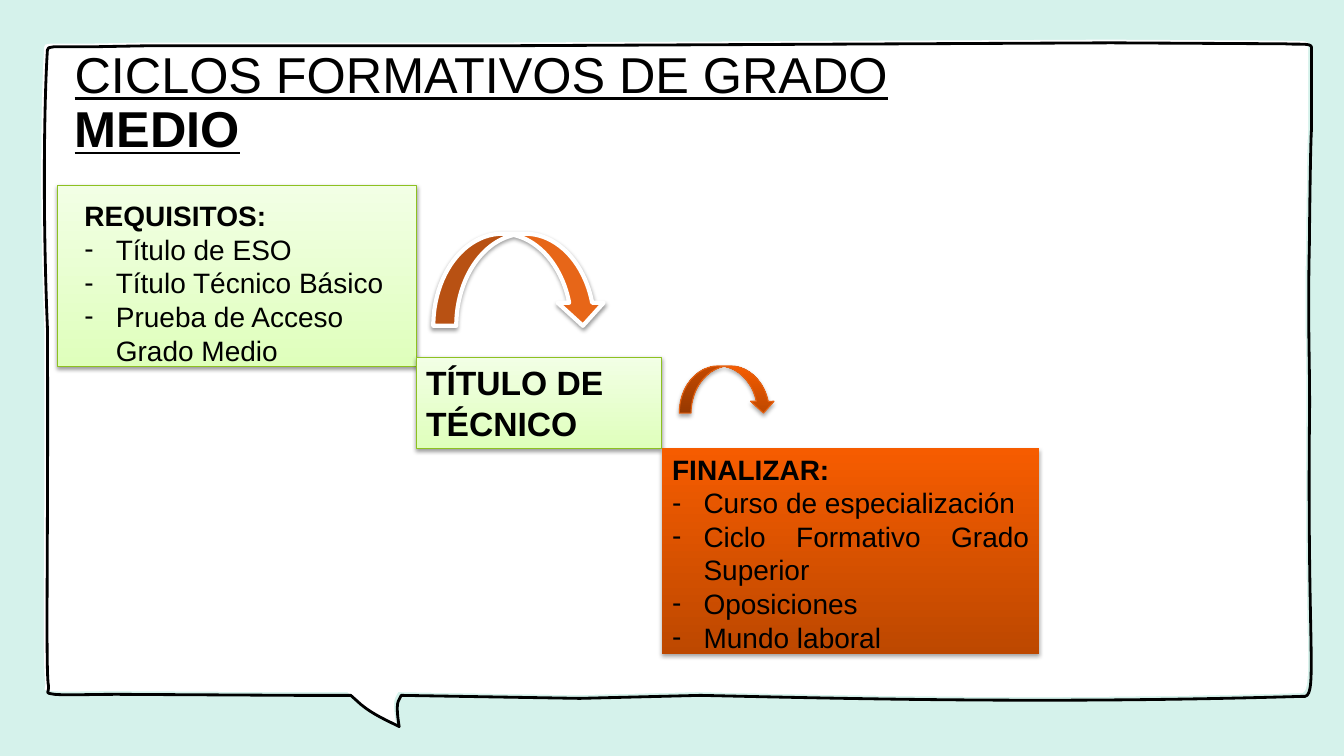
from dataclasses import dataclass

import pptx
import pptx.dml.color
import pptx.enum.shapes
import pptx.enum.text
import pptx.oxml
import pptx.oxml.ns
import pptx.util
from lxml import etree

Cm = pptx.util.Cm
Pt = pptx.util.Pt
qn = pptx.oxml.ns.qn
SHAPES = pptx.enum.shapes.MSO_SHAPE
ANCHOR = pptx.enum.text.MSO_ANCHOR
ALIGN = pptx.enum.text.PP_ALIGN


@dataclass(frozen=True)
class Theme:
    font: str = "Arial"
    text: str = "000000"
    background: str = "D5F2EB"
    paper: str = "FFFFFF"
    green: tuple = ("DFFFBC", "F2FFE5")
    green_line: str = "8DC121"
    orange: tuple = ("BD4800", "F65C00")
    arrow: str = "E76618"
    arrow_line: str = "E66212"
    title_size: int = 36
    heading_size: int = 24
    body_size: int = 20


@dataclass(frozen=True)
class Box:
    """A rectangle in centimetres."""
    left: float
    top: float
    width: float
    height: float

    def lengths(self):
        return [Cm(v) for v in (self.left, self.top, self.width, self.height)]

    def inner(self, dx, dy, width, height):
        return Box(self.left + dx, self.top + dy, width, height)


THEME = Theme()

# Speech bubble outline on a 1257 x 679 grid; six numbers make a cubic curve.
BUBBLE_GRID = (1257, 679)
BUBBLE_START = (1058, 0)
BUBBLE_SEGMENTS = [
    (1231, 1), (1244, 2, 1256, 0, 1257, 4), (1257, 36), (1257, 53, 1257, 70, 1257, 87),
    (1256, 100, 1255, 193, 1255, 199), (1253, 287, 1256, 323, 1255, 382),
    (1253, 614, 1264, 652, 1248, 649), (1011, 656, 827, 652, 651, 648),
    (531, 651), (354, 648), (352, 652), (349, 656, 350, 667, 352, 679),
    (340, 673, 326, 667, 314, 657), (304, 648), (251, 648), (73, 647),
    (45, 647, 22, 648, 10, 647), (-1, 645, 5, 647, 4, 638),
    (1, 623, 4, 479, 3, 283), (-2, 164, 0, 53, 3, 7), (4, 6, 4, 5, 4, 5),
    (9, 4), (33, 4), (45, 4), (99, 3), (436, 3),
]


def color(value):
    return pptx.dml.color.RGBColor.from_string(value)


def paint(shape, fill=None, line=None, line_width=0.75):
    """Set a solid or two-colour upward gradient fill, and the line."""
    shape.shadow.inherit = False
    if fill is None:
        shape.fill.background()
    elif isinstance(fill, tuple):
        shape.fill.gradient()
        shape.fill.gradient_angle = 90
        for stop, value in zip(shape.fill.gradient_stops, fill):
            stop.color.rgb = color(value)
    else:
        shape.fill.solid()
        shape.fill.fore_color.rgb = color(fill)
    if line is None:
        shape.line.fill.background()
    else:
        shape.line.color.rgb = color(line)
        shape.line.width = Pt(line_width)


def add_soft_shadow(shape, opacity, distance):
    effects = shape._element.spPr.find(qn("a:effectLst"))
    shadow = etree.SubElement(effects, qn("a:outerShdw"), blurRad=str(Pt(3.1)),
                              dist=str(Pt(distance)), dir="5400000", rotWithShape="0")
    black = etree.SubElement(shadow, qn("a:srgbClr"), val=THEME.text)
    etree.SubElement(black, qn("a:alpha"), val=str(opacity * 1000))


def add_bullet(paragraph):
    properties = paragraph._p.get_or_add_pPr()
    indent = Cm(0.79)
    properties.set("marL", str(indent))
    properties.set("indent", str(-indent))
    bullet_color = etree.SubElement(properties, qn("a:buClr"))
    etree.SubElement(bullet_color, qn("a:srgbClr"), val=THEME.text)
    etree.SubElement(properties, qn("a:buFont"), typeface=THEME.font)
    etree.SubElement(properties, qn("a:buChar"), char="-")


def add_run(paragraph, text, size, bold=False, underline=None):
    run = paragraph.add_run()
    run.text = text
    run.font.name = THEME.font
    run.font.size = Pt(size)
    run.font.bold = bold
    run.font.underline = underline
    run.font.color.rgb = color(THEME.text)


def write_list(frame, heading, items=(), size=THEME.body_size, align=ALIGN.LEFT):
    """Write a bold heading followed by dashed items."""
    frame.word_wrap = True
    paragraph = frame.paragraphs[0]
    paragraph.alignment = align
    add_run(paragraph, heading, size, bold=True)
    for item in items:
        paragraph = frame.add_paragraph()
        paragraph.alignment = align
        add_bullet(paragraph)
        add_run(paragraph, item, size)


def bend_segments(shape, segments, origin):
    """Turn the straight segments that have control points into cubic curves."""
    lines = list(shape._element.iter(qn("a:lnTo")))
    for line, segment in zip(lines, segments):
        if len(segment) == 2:
            continue
        curve = etree.Element(qn("a:cubicBezTo"))
        for x, y in zip(segment[::2], segment[1::2]):
            etree.SubElement(curve, qn("a:pt"), x=str(round(x - origin[0])),
                             y=str(round(y - origin[1])))
        line.getparent().replace(line, curve)


def add_bubble(slide, box):
    """Draw the white paper and, slightly shifted, its black outline."""
    scales = (Cm(box.width) / BUBBLE_GRID[0], Cm(box.height) / BUBBLE_GRID[1])
    start, *segments = [[value * scales[i % 2] for i, value in enumerate(segment)]
                        for segment in [BUBBLE_START, *BUBBLE_SEGMENTS]]
    ends = [segment[-2:] for segment in segments]
    origin = [min(point[axis] for point in [start, *ends]) for axis in (0, 1)]
    for shift, fill, line in ((0, THEME.paper, None), (0.08, None, THEME.text)):
        builder = slide.shapes.build_freeform(*start)
        builder.add_line_segments(ends, close=True)
        shape = builder.convert_to_shape(Cm(box.left + shift), Cm(box.top + shift))
        bend_segments(shape, segments, origin)
        paint(shape, fill, line, 2)


def add_title(slide, box):
    frame = slide.shapes.add_textbox(*box.lengths()).text_frame
    frame.word_wrap = True
    frame.vertical_anchor = ANCHOR.MIDDLE
    frame.margin_left = frame.margin_right = frame.margin_top = frame.margin_bottom = 0
    paragraph = frame.paragraphs[0]
    paragraph.line_spacing = 0.9
    add_run(paragraph, "CICLOS FORMATIVOS DE GRADO ", THEME.title_size, underline=True)
    add_run(paragraph, "MEDIO", THEME.title_size, bold=True, underline=True)


def add_card(slide, box, fill, line=None, opacity=38, distance=1.6):
    card = slide.shapes.add_shape(SHAPES.RECTANGLE, *box.lengths())
    paint(card, fill, line)
    add_soft_shadow(card, opacity, distance)
    return card


def add_requirements(slide, box):
    add_card(slide, box, THEME.green, THEME.green_line)
    text_box = slide.shapes.add_textbox(*box.inner(0.43, 0.21, box.width, 5.26).lengths())
    write_list(text_box.text_frame, "REQUISITOS:",
               ["Título de ESO", "Título Técnico Básico", "Prueba de Acceso Grado Medio"])


def add_degree(slide, box):
    add_card(slide, box, THEME.green, THEME.green_line)
    text_box = slide.shapes.add_textbox(*box.inner(0, 0, 8.1, 2.29).lengths())
    write_list(text_box.text_frame, "TÍTULO DE TÉCNICO", size=THEME.heading_size)


def add_outcomes(slide, box):
    card = add_card(slide, box, THEME.orange, opacity=35, distance=1.8)
    card.text_frame.vertical_anchor = ANCHOR.MIDDLE
    card.text_frame.margin_top = Cm(0.22)
    write_list(card.text_frame, "FINALIZAR:",
               ["Curso de especialización", "Ciclo Formativo Grado Superior",
                "Oposiciones", "Mundo laboral"], align=ALIGN.JUSTIFY)


def add_curved_arrow(slide, box, fill, line, line_width, opacity, distance):
    arrow = slide.shapes.add_shape(SHAPES.CURVED_DOWN_ARROW, *box.lengths())
    paint(arrow, fill, line, line_width)
    add_soft_shadow(arrow, opacity, distance)


def main():
    presentation = pptx.Presentation()
    presentation.slide_width, presentation.slide_height = Cm(33.87), Cm(19.05)
    slide = presentation.slides.add_slide(presentation.slide_layouts[6])
    slide.background.fill.solid()
    slide.background.fill.fore_color.rgb = color(THEME.background)
    add_bubble(slide, Box(1.04, 1.0, 31.93, 17.23))
    add_title(slide, Box(1.88, 0.79, 24.31, 3.66))
    add_requirements(slide, Box(1.45, 4.67, 9.04, 4.56))
    add_degree(slide, Box(10.49, 9.0, 6.19, 2.31))
    add_outcomes(slide, Box(16.69, 11.29, 9.5, 5.19))
    add_curved_arrow(slide, Box(10.92, 5.89, 4.35, 2.32), THEME.arrow, THEME.paper, 3, 38, 1.6)
    add_curved_arrow(slide, Box(17.12, 9.22, 2.42, 1.19), THEME.orange,
                     THEME.arrow_line, 0.75, 35, 1.8)
    presentation.save("out.pptx")


if __name__ == "__main__":
    main()
